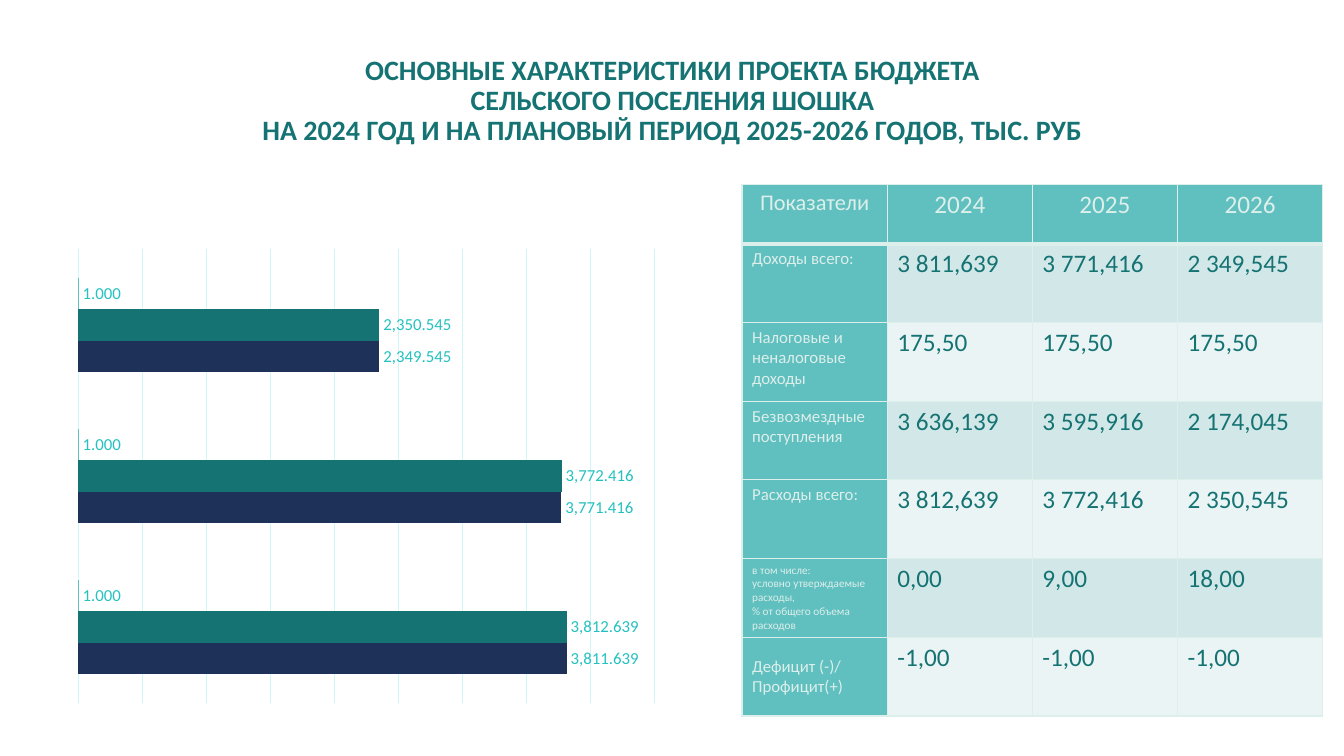
from lxml import etree
from pptx import Presentation
from pptx.chart.data import CategoryChartData
from pptx.dml.color import RGBColor
from pptx.enum.chart import XL_CHART_TYPE, XL_LABEL_POSITION
from pptx.enum.text import MSO_ANCHOR, MSO_AUTO_SIZE, PP_ALIGN
from pptx.oxml import parse_xml
from pptx.oxml.ns import nsdecls, qn
from pptx.util import Inches, Pt

TEAL = RGBColor(0x16, 0x73, 0x73)
NAVY = RGBColor(0x1E, 0x32, 0x59)
AQUA = RGBColor(0x60, 0xBF, 0xBF)
LABEL = RGBColor(0x25, 0xC1, 0xC1)
GRID = RGBColor(0xD0, 0xF6, 0xF6)
PALE = RGBColor(0xDC, 0xEF, 0xEB)
BANDS = (RGBColor(0xD2, 0xE8, 0xE8), RGBColor(0xEA, 0xF4, 0xF4))
FONT = "Calibri"

TITLE = ("ОСНОВНЫЕ ХАРАКТЕРИСТИКИ ПРОЕКТА БЮДЖЕТА\v"
         "СЕЛЬСКОГО ПОСЕЛЕНИЯ ШОШКА\v"
         "НА 2024 ГОД И НА ПЛАНОВЫЙ ПЕРИОД 2025-2026 ГОДОВ, ТЫС. РУБ")
SERIES = [
    ("Series 1", (3811.639, 3771.416, 2349.545), NAVY),
    ("Series 2", (3812.639, 3772.416, 2350.545), TEAL),
    ("Series 3", (1, 1, 1), AQUA),
]
ROWS = [
    ("Показатели", "2024", "2025", "2026"),
    ("Доходы всего:", "3 811,639", "3 771,416", "2 349,545"),
    ("Налоговые и неналоговые доходы", "175,50", "175,50", "175,50"),
    ("Безвозмездные поступления", "3 636,139", "3 595,916", "2 174,045"),
    ("Расходы всего:", "3 812,639", "3 772,416", "2 350,545"),
    ("в том числе:\nусловно утверждаемые расходы,\n% от общего объема расходов",
     "0,00", "9,00", "18,00"),
    ("Дефицит (-)/ Профицит(+)", "-1,00", "-1,00", "-1,00"),
]
NAME_SIZES = (16, 12, 12, 12, 12, 8, 12)


def set_font(font, size, color, bold=False):
    values = {"name": FONT, "size": Pt(size), "bold": bold}
    for name, value in values.items():
        setattr(font, name, value)
    font.color.rgb = color


def add_title(slide, left, top, width, height):
    sp = slide.shapes.title
    box = {"left": left, "top": top, "width": width, "height": height}
    for name, value in box.items():
        setattr(sp, name, Inches(value))
    tf = sp.text_frame
    tf.text = TITLE
    tf.auto_size = MSO_AUTO_SIZE.NONE
    tf.vertical_anchor = MSO_ANCHOR.MIDDLE
    p = tf.paragraphs[0]
    p.alignment = PP_ALIGN.CENTER
    p.line_spacing = 0.9
    for r in p.runs:
        set_font(r.font, 20, TEAL, True)


def set_plot_area(chart, **fractions):
    """Place the inner plot area by fractions of the chart box."""
    plot_area = chart._chartSpace.chart.plotArea
    for old in plot_area.findall(qn("c:layout")):
        plot_area.remove(old)
    layout = parse_xml(
        f'<c:layout {nsdecls("c")}><c:manualLayout><c:layoutTarget val="inner"/>'
        '<c:xMode val="edge"/><c:yMode val="edge"/></c:manualLayout></c:layout>')
    for name, value in fractions.items():
        etree.SubElement(layout[0], qn(f"c:{name}")).set("val", str(value))
    plot_area.insert(0, layout)


def add_budget_chart(slide, left, top, width, height):
    data = CategoryChartData(number_format="#,##0.000")
    data.categories = ["1", "2", "3"]
    for name, values, _ in SERIES:
        data.add_series(name, values)
    chart = slide.shapes.add_chart(
        XL_CHART_TYPE.BAR_CLUSTERED, Inches(left), Inches(top),
        Inches(width), Inches(height), data).chart
    chart.has_legend = chart.has_title = False
    set_font(chart.font, 10, TEAL)
    set_plot_area(chart, x=0.069, y=0.113, w=0.861, h=0.853)

    chart.category_axis.visible = False
    axis = chart.value_axis
    axis.visible = False
    axis.has_major_gridlines = True
    line = axis.major_gridlines.format.line
    line.color.rgb = GRID
    line.width = Pt(0.75)
    axis.tick_labels.number_format = "#,##0.000"
    axis.tick_labels.number_format_is_linked = False

    plot = chart.plots[0]
    plot.gap_width, plot.overlap = 182, 0
    plot.vary_by_categories = False
    for series, (_, _, color) in zip(plot.series, SERIES):
        series.format.fill.solid()
        series.format.fill.fore_color.rgb = color
        labels = series.data_labels
        labels.show_value = True
        labels.position = XL_LABEL_POSITION.OUTSIDE_END
        set_font(labels.font, 12, LABEL)


def add_borders(cell, bottom):
    tc_pr = cell._tc.get_or_add_tcPr()
    for side, width in (("L", 1), ("R", 1), ("T", 1), ("B", bottom)):
        tc_pr.append(parse_xml(
            f'<a:ln{side} {nsdecls("a")} w="{Pt(width)}"><a:solidFill>'
            f'<a:srgbClr val="{PALE}"/></a:solidFill></a:ln{side}>'))


def format_cell(cell, row, col):
    header, name = row == 0, col == 0
    add_borders(cell, 3 if header else 1)
    cell.fill.solid()
    cell.fill.fore_color.rgb = AQUA if header or name else BANDS[(row - 1) % 2]
    cell.text = ROWS[row][col]
    for p in cell.text_frame.paragraphs:
        p.alignment = PP_ALIGN.CENTER if header else PP_ALIGN.LEFT
        for r in p.runs:
            set_font(r.font, NAME_SIZES[row] if name else 18,
                     PALE if header or name else TEAL)


def add_budget_table(slide, left, top, width, height, header_height):
    table = slide.shapes.add_table(
        len(ROWS), len(ROWS[0]), Inches(left), Inches(top),
        Inches(width), Inches(height)).table
    row_height = (height - header_height) / (len(ROWS) - 1)
    for column in table.columns:
        column.width = Inches(width / len(ROWS[0]))
    for i, row in enumerate(table.rows):
        row.height = Inches(row_height if i else header_height)
        for j, cell in enumerate(row.cells):
            format_cell(cell, i, j)
    table.cell(len(ROWS) - 1, 0).vertical_anchor = MSO_ANCHOR.MIDDLE


def main():
    prs = Presentation()
    prs.slide_width, prs.slide_height = Inches(13.33), Inches(7.5)
    slide = prs.slides.add_slide(prs.slide_layouts[5])
    add_title(slide, 0.92, 0.16, 11.5, 1.69)
    add_budget_chart(slide, 0.32, 1.88, 6.64, 5.27)
    add_budget_table(slide, 7.36, 1.83, 5.76, 5.27, header_height=0.59)
    prs.save("out.pptx")


if __name__ == "__main__":
    main()
